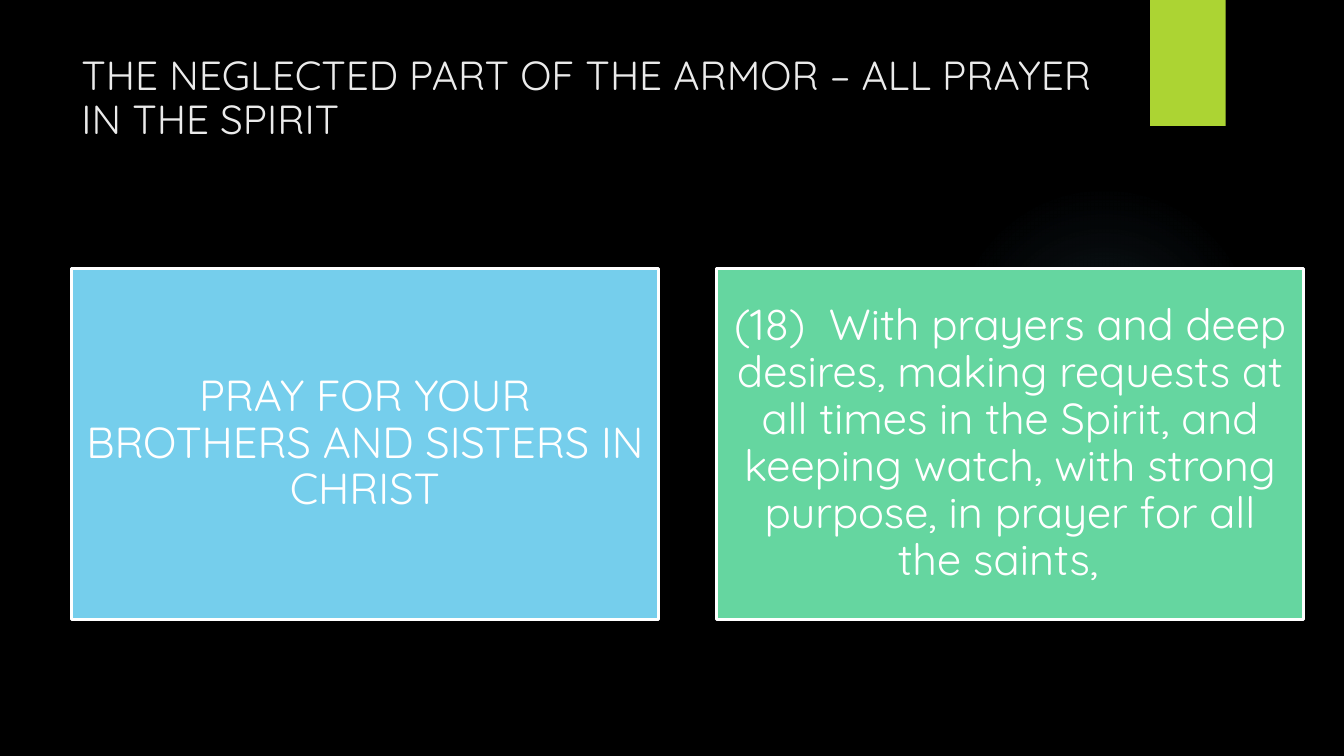
from lxml import etree
from pptx import Presentation
from pptx.dml.color import RGBColor
from pptx.enum.shapes import MSO_SHAPE as Shape
from pptx.enum.text import MSO_ANCHOR as Anchor, PP_ALIGN as Align
from pptx.oxml import parse_xml
from pptx.oxml.ns import nsdecls, qn
from pptx.util import Pt

COLORS = {
    "background": "000000",
    "glow": "7AC4F0",
    "tab": "ACD433",
    "title": "EBEBEB",
    "white": "FFFFFF",
    "blue": "75CEEC",
    "green": "65D6A0",
}
FONT = "Quicksand"
CARDS = [
    ("blue", "PRAY FOR YOUR BROTHERS AND SISTERS IN CHRIST"),
    ("green", "(18)  With prayers and deep desires, making requests at all times "
              "in the Spirit, and keeping watch, with strong purpose, in prayer "
              "for all the saints,  "),
]


def color(name):
    return RGBColor.from_string(COLORS[name])


def add_block(slide, kind, box, fill):
    shape = slide.shapes.add_shape(kind, *map(Pt, box))
    shape.shadow.inherit = False
    shape.fill.solid()
    shape.fill.fore_color.rgb = color(fill)
    shape.line.fill.background()
    return shape


def write(frame, text, size, ink, align, anchor):
    frame.word_wrap = True
    frame.vertical_anchor = anchor
    paragraph = frame.paragraphs[0]
    paragraph.text = text
    paragraph.alignment = align
    paragraph.line_spacing = 0.9
    paragraph.font.name = FONT
    paragraph.font.size = Pt(size)
    paragraph.font.color.rgb = color(ink)


def add_glow(slide, box):
    glow = add_block(slide, Shape.OVAL, box, "glow")
    gradient = parse_xml(f'<a:gradFill {nsdecls("a")} rotWithShape="1"><a:gsLst/></a:gradFill>')
    for position, alpha in [(0, 7), (36, 6), (69, 0)]:
        stop = etree.SubElement(gradient[0], qn("a:gs"), pos=str(position * 1000))
        tint = etree.SubElement(stop, qn("a:srgbClr"), val=COLORS["glow"])
        etree.SubElement(tint, qn("a:alpha"), val=str(alpha * 1000))
    circle = etree.SubElement(gradient, qn("a:path"), path="circle")
    etree.SubElement(circle, qn("a:fillToRect"), dict.fromkeys("ltrb", "50000"))
    properties = glow.element.spPr
    properties.replace(properties.find(qn("a:solidFill")), gradient)


def add_title(slide, box, text):
    title = slide.shapes.add_textbox(*map(Pt, box))
    write(title.text_frame, text, 29, "title", Align.LEFT, Anchor.TOP)


def add_cards(slide, box, gap):
    left, top, width, height = box
    card_width = (width - gap * (len(CARDS) - 1)) / len(CARDS)
    for index, (fill, text) in enumerate(CARDS):
        card_left = left + index * (card_width + gap)
        card = add_block(slide, Shape.RECTANGLE, (card_left, top, card_width, height), fill)
        card.line.color.rgb = color("white")
        card.line.width = Pt(2.25)
        frame = card.text_frame
        frame.margin_left = frame.margin_right = Pt(9.4)
        frame.margin_top = frame.margin_bottom = Pt(9.4)
        write(frame, text, 31, "white", Align.CENTER, Anchor.MIDDLE)


def build_slide(presentation):
    slide = presentation.slides.add_slide(presentation.slide_layouts[6])
    slide.background.fill.solid()
    slide.background.fill.fore_color.rgb = color("background")
    # Backdrop: faint glow and green tab
    add_glow(slide, (677.5, 131.8, 221.8, 221.8))
    add_block(slide, Shape.RECTANGLE, (821.5, 0, 54, 90), "tab")
    # Heading
    add_title(slide, (51.1, 36, 740.9, 110.2),
              "THE NEGLECTED PART OF THE ARMOR – ALL PRAYER IN THE SPIRIT")
    # Two message cards
    add_cards(slide, (51.1, 191.5, 879.8, 251.3), 41.8)


def main():
    presentation = Presentation()
    presentation.slide_width = Pt(960)
    presentation.slide_height = Pt(540)
    build_slide(presentation)
    presentation.save("out.pptx")


if __name__ == "__main__":
    main()
